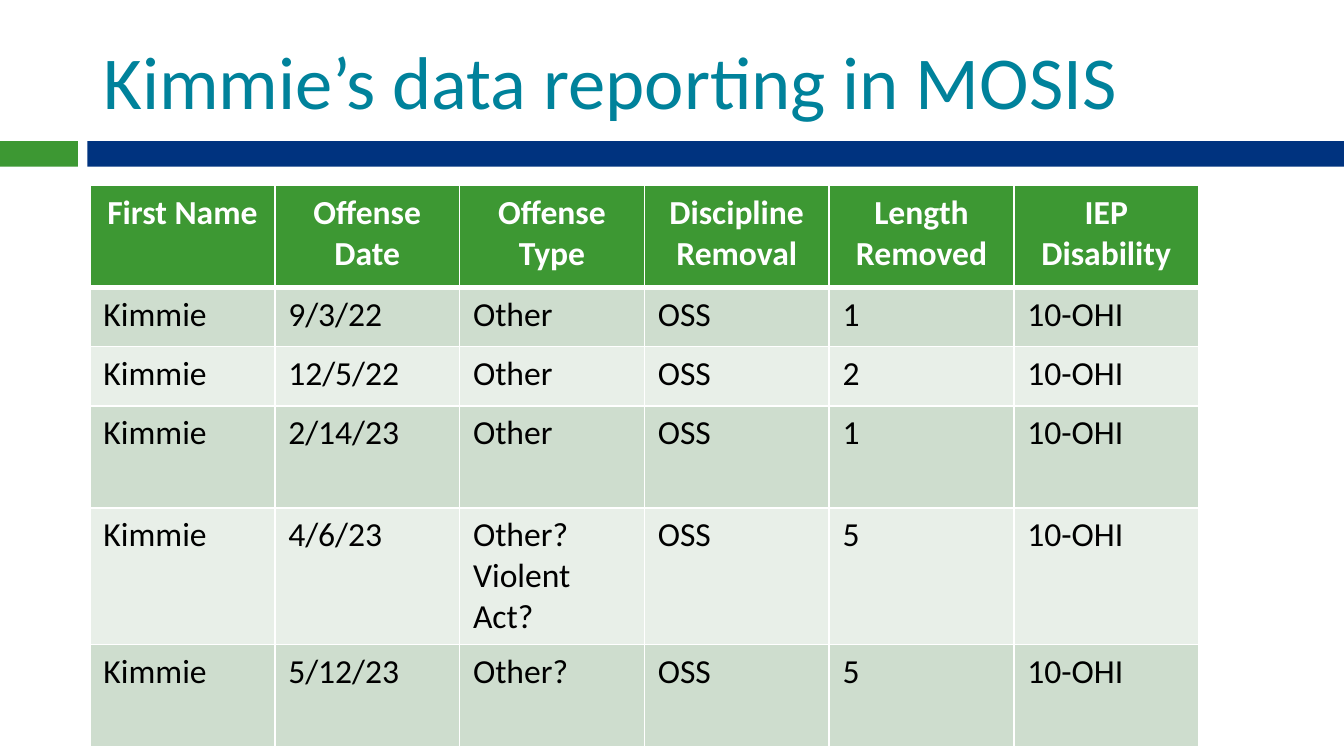
from pptx import Presentation
from pptx.dml.color import RGBColor as RGB
from pptx.enum.shapes import MSO_SHAPE as Shape
from pptx.enum.text import MSO_ANCHOR as Anchor, MSO_AUTO_SIZE as Fit, PP_ALIGN as Align
from pptx.oxml import parse_xml
from pptx.oxml.ns import nsdecls
from pptx.util import Inches, Pt

GREEN = RGB(0x3D, 0x98, 0x33)
NAVY = RGB(0x00, 0x33, 0x7F)
TEAL = RGB(0x00, 0x82, 0x9B)
SAGE = RGB(0xCE, 0xDD, 0xCE)
PALE = RGB(0xE8, 0xEF, 0xE8)
WHITE = RGB(0xFF, 0xFF, 0xFF)
BLACK = RGB(0x00, 0x00, 0x00)

WIDTH = 10
HEIGHT = WIDTH * 9 / 16
HEADS = ["First Name", "Offense Date", "Offense Type",
         "Discipline Removal", "Length Removed", "IEP Disability"]
CASES = [
    ("9/3/22", "Other", "1"),
    ("12/5/22", "Other", "2"),
    ("2/14/23", "Other", "1"),
    ("4/6/23", "Other?\nViolent Act?", "5"),
    ("5/12/23", "Other?", "5"),
]
ROWS = [HEADS] + [["Kimmie", date, kind, "OSS", days, "10-OHI"]
                  for date, kind, days in CASES]
HEIGHTS = [0.76, 0.44, 0.44, 0.76, 0.76, 0.76]


class Deck:
    def __init__(self, width, height):
        self.font = "Calibri"
        self.file = Presentation()
        self.file.slide_width = Inches(width)
        self.file.slide_height = Inches(height)
        self.slide = self.file.slides.add_slide(self.file.slide_layouts[5])

    def style(self, frame, align, **look):
        for para in frame.paragraphs:
            para.alignment = align
            para.font.color.rgb = look["color"]
            for key, value in {"name": self.font, "size": Pt(look["size"]),
                               "bold": look.get("bold", False)}.items():
                setattr(para.font, key, value)

    def title(self, text, left, top, width, height):
        box = self.slide.shapes.title
        place = {"left": left, "top": top, "width": width, "height": height}
        for key, value in place.items():
            setattr(box, key, Inches(value))
        frame = box.text_frame
        frame.text = text
        frame.auto_size = Fit.NONE
        frame.vertical_anchor = Anchor.MIDDLE
        self.style(frame, Align.LEFT, size=40, color=TEAL)

    def bar(self, left, width, color):
        shape = self.slide.shapes.add_shape(
            Shape.RECTANGLE, Inches(left), Inches(1.05), Inches(width), Inches(0.19))
        shape.shadow.inherit = False
        shape.fill.solid()
        shape.fill.fore_color.rgb = color
        shape.line.fill.background()

    def edges(self, cell, top, bottom):
        """Draw white cell borders, with top and bottom widths in points."""
        props = cell._tc.get_or_add_tcPr()
        for side, width in {"L": 1, "R": 1, "T": top, "B": bottom}.items():
            props.append(parse_xml(
                f'<a:ln{side} {nsdecls("a")} w="{Pt(width)}"><a:solidFill>'
                f'<a:srgbClr val="{WHITE}"/></a:solidFill></a:ln{side}>'))

    def table(self, rows, left, top, width, heights):
        count = len(rows[0])
        grid = self.slide.shapes.add_table(
            len(rows), count, Inches(left), Inches(top),
            Inches(width), Inches(sum(heights))).table
        for r, (row, height) in enumerate(zip(rows, heights)):
            grid.rows[r].height = Inches(height)
            head = r == 0
            for c, text in enumerate(row):
                cell = grid.cell(r, c)
                cell.text = text
                self.edges(cell, 3 if r == 1 else 1, 3 if head else 1)
                cell.fill.solid()
                cell.fill.fore_color.rgb = GREEN if head else SAGE if r % 2 else PALE
                self.style(cell.text_frame, Align.CENTER if head else Align.LEFT,
                           size=18, color=WHITE if head else BLACK, bold=head)


def main():
    deck = Deck(WIDTH, HEIGHT)
    deck.bar(0, 0.58, GREEN)
    deck.bar(0.65, 9.35, NAVY)
    deck.title("Kimmie’s data reporting in MOSIS", 0.67, 0.19, 8.92, 0.81)
    deck.table(ROWS, 0.67, 1.38, 8.25, HEIGHTS)
    deck.file.save("out.pptx")


if __name__ == "__main__":
    main()
